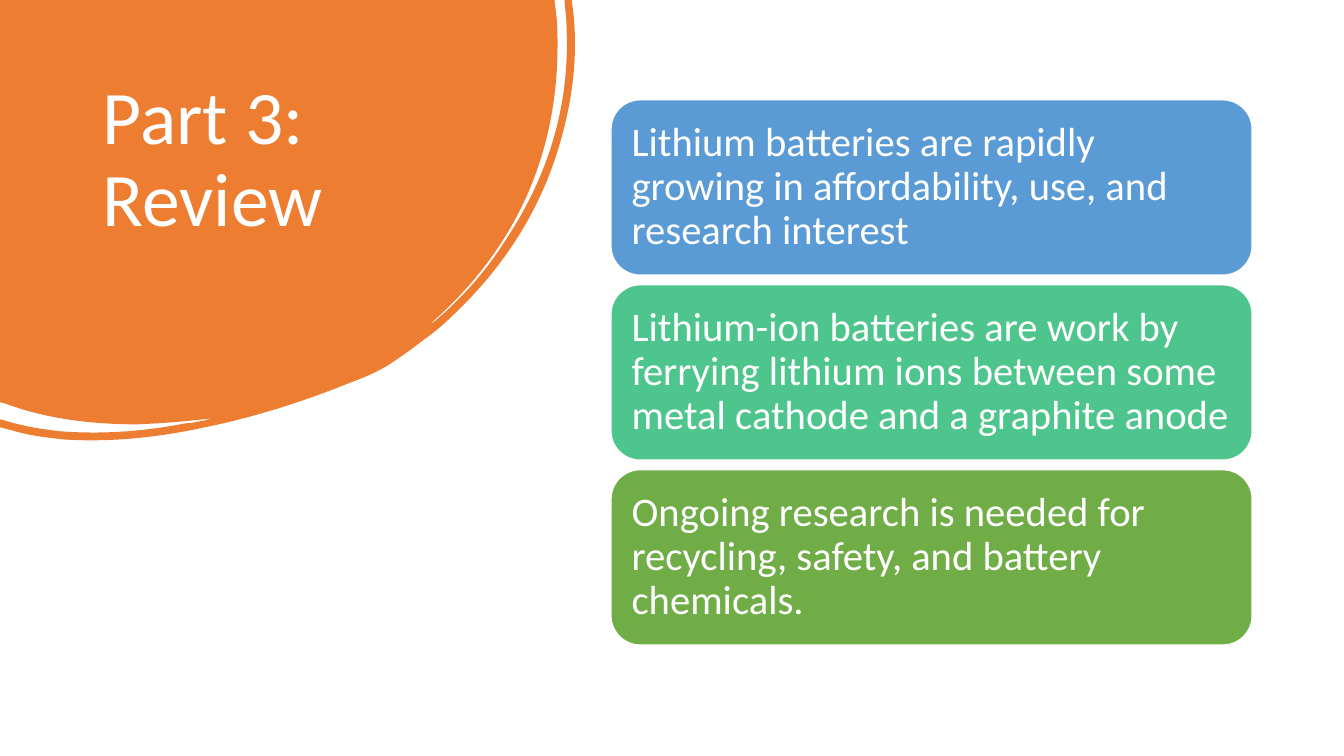
from pptx import Presentation
from pptx.dml.color import RGBColor
from pptx.enum.shapes import MSO_SHAPE
from pptx.enum.text import MSO_ANCHOR as ANCHOR, MSO_AUTO_SIZE as AUTO_SIZE, PP_ALIGN as ALIGN
from pptx.oxml.ns import qn
from pptx.util import Emu, Pt

SCALE = 9144  # EMU per px, 100 px to the inch
FONT = "Calibri"
WHITE = "FFFFFF"
ORANGE = "ED7D31"

# Outline of the blob: two numbers make a line, six make a cubic curve
BLOB_WIDTH, BLOB_HEIGHT = 571, 437
BLOB = [
    (0, 0), (550, 0), (552, 17),
    (553, 26, 553, 36, 553, 45), (553, 101, 542, 154, 518, 204),
    (496, 249, 465, 288, 427, 321), (429, 321, 430, 319, 432, 318),
    (459, 295, 482, 269, 501, 239), (543, 176, 565, 107, 562, 30),
    (562, 21, 561, 12, 560, 3), (560, 0), (567, 0), (568, 7),
    (574, 54, 568, 102, 553, 150), (533, 214, 497, 268, 448, 314),
    (439, 323, 429, 331, 419, 338), (409, 346, 399, 353, 387, 361),
    (375, 369, 360, 375, 344, 381), (299, 399, 252, 414, 203, 424),
    (157, 434, 110, 439, 63, 436), (45, 434, 28, 432, 12, 427),
    (0, 424), (0, 416), (4, 417),
    (23, 423, 42, 426, 61, 428), (103, 431, 143, 428, 184, 420),
    (189, 420, 193, 419, 198, 418), (202, 418, 206, 416, 210, 415),
    (186, 418, 161, 420, 136, 421), (92, 421, 48, 416, 7, 401),
    (0, 399),
]

CARDS = [
    ("Lithium batteries are rapidly growing in affordability, use, and research interest", "5B9BD5"),
    ("Lithium-ion batteries are work by ferrying lithium ions between some metal cathode "
     "and a graphite anode", "4DC58D"),
    ("Ongoing research is needed for recycling, safety, and battery chemicals.", "70AD47"),
]
CARD_LEFT, CARD_WIDTH, CARD_HEIGHT = 606, 636, 174
FIRST_TOP, LAST_TOP = 99, 466
CARD_PITCH = (LAST_TOP - FIRST_TOP) / (len(CARDS) - 1)
CARD_INSET = 12


def px(value):
    return Emu(round(value * SCALE))


def color(hex_string):
    return RGBColor.from_string(hex_string)


def place(shape, left, top, width, height):
    shape.left, shape.top = px(left), px(top)
    shape.width, shape.height = px(width), px(height)


def paint(shape, fill):
    shape.shadow.inherit = False
    shape.fill.solid()
    shape.fill.fore_color.rgb = color(fill)


def write(shape, text, size, anchor):
    frame = shape.text_frame
    frame.text = text
    frame.word_wrap = True
    frame.auto_size = AUTO_SIZE.NONE
    frame.vertical_anchor = anchor
    paragraph = frame.paragraphs[0]
    paragraph.alignment = ALIGN.LEFT
    paragraph.line_spacing = 0.9
    font = paragraph.runs[0].font
    font.name, font.size = FONT, Pt(size)
    font.color.rgb = color(WHITE)


def bend(outline_element, segments):
    """Join each three lines of a six-number segment into one cubic curve."""
    lines = iter(list(outline_element.iter(qn("a:lnTo"))))
    for segment in segments:
        curve = next(lines)
        if len(segment) == 6:
            curve.tag = qn("a:cubicBezTo")
            for line in (next(lines), next(lines)):
                curve.append(line[0])
                outline_element.remove(line)


def add_blob(slide, segments, fill):
    points = [(px(x), px(y)) for segment in segments
              for x, y in zip(segment[::2], segment[1::2])]
    builder = slide.shapes.build_freeform(*points[0])
    builder.add_line_segments(points[1:], close=True)
    shape = builder.convert_to_shape()
    outline_element = next(shape._element.iter(qn("a:path")))
    bend(outline_element, segments[1:])
    # Frame the curves themselves, not their control points
    place(shape, 0, 0, BLOB_WIDTH, BLOB_HEIGHT)
    outline_element.set("w", str(px(BLOB_WIDTH)))
    outline_element.set("h", str(px(BLOB_HEIGHT)))
    paint(shape, fill)
    shape.line.fill.background()
    return shape


def add_card(slide, top, text, fill):
    shape = slide.shapes.add_shape(MSO_SHAPE.ROUNDED_RECTANGLE, 0, 0, 0, 0)
    place(shape, CARD_LEFT, top, CARD_WIDTH, CARD_HEIGHT)
    paint(shape, fill)
    shape.line.color.rgb = color(WHITE)
    shape.line.width = Pt(1)
    frame = shape.text_frame
    frame.margin_left = frame.margin_right = px(CARD_INSET)
    frame.margin_top = frame.margin_bottom = px(CARD_INSET)
    write(shape, text, 29, ANCHOR.MIDDLE)


def main():
    presentation = Presentation()
    presentation.slide_width, presentation.slide_height = px(1333), px(750)
    slide = presentation.slides.add_slide(presentation.slide_layouts[5])

    # Title on the orange blob, with the blob behind it
    title = slide.shapes.title
    place(title, 92, 74, 352, 222)
    write(title, "Part 3: Review", 54, ANCHOR.TOP)
    blob = add_blob(slide, BLOB, ORANGE)
    title._element.addprevious(blob._element)

    # Column of review cards
    for index, (text, fill) in enumerate(CARDS):
        add_card(slide, FIRST_TOP + index * CARD_PITCH, text, fill)

    presentation.save("out.pptx")


if __name__ == "__main__":
    main()
